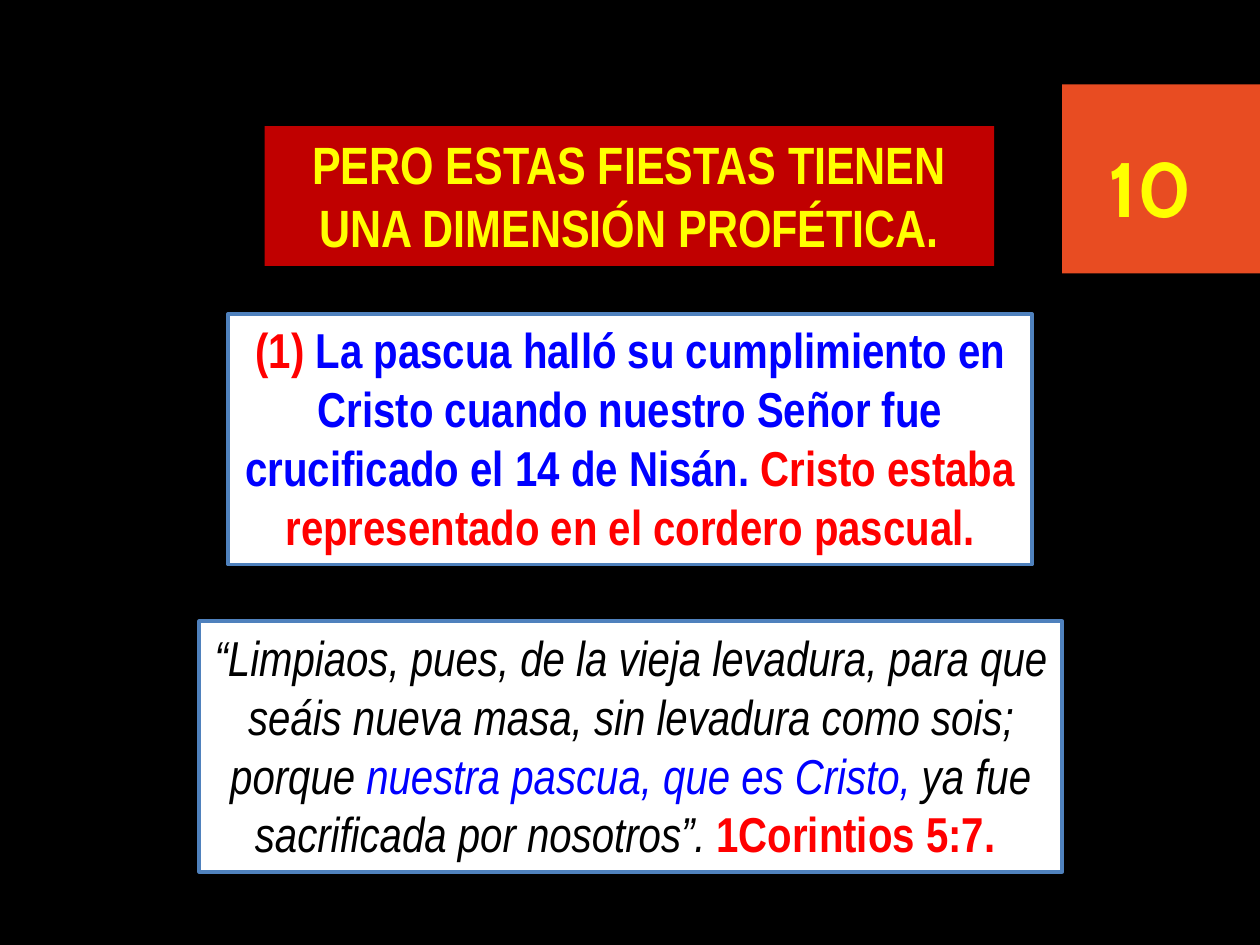
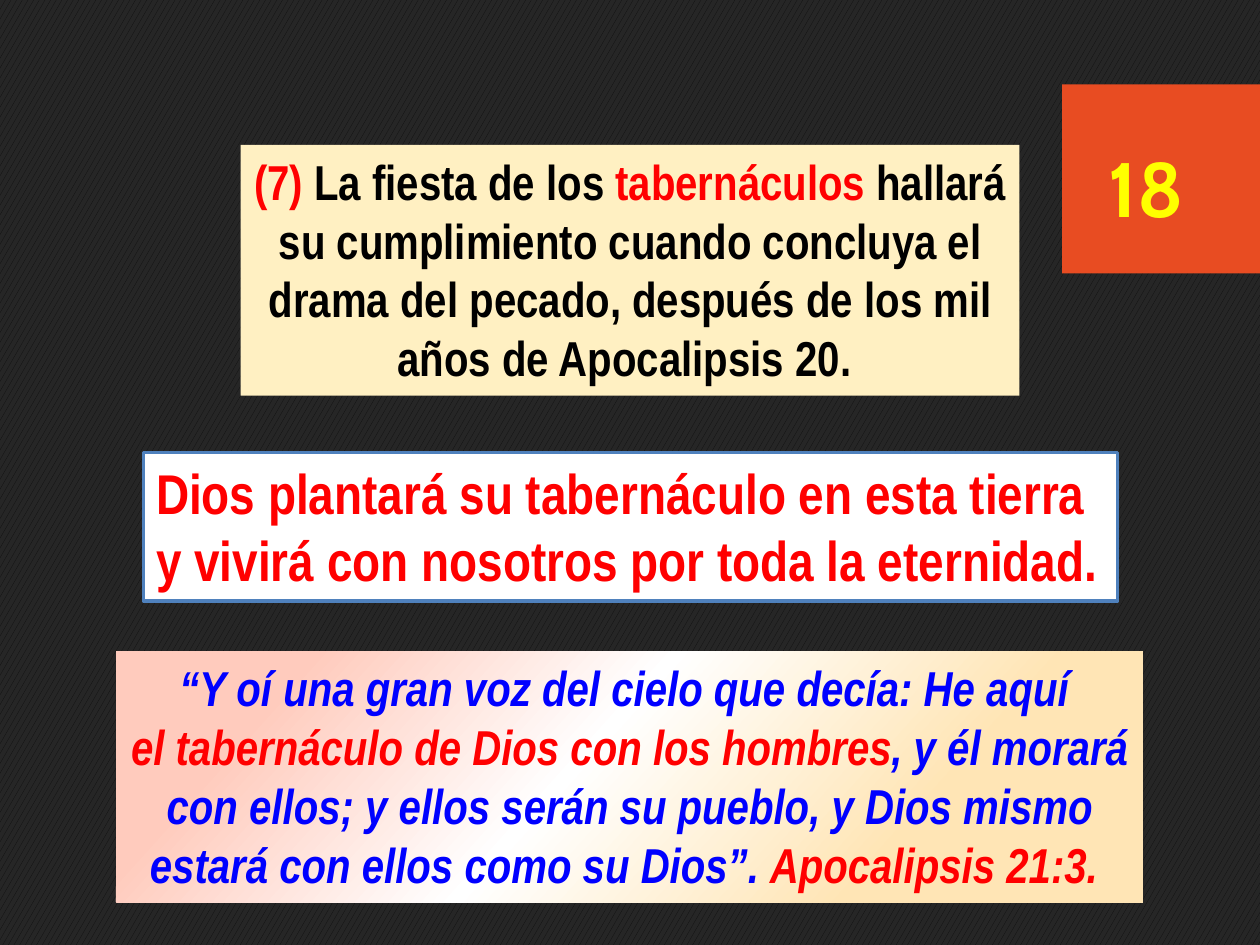
from copy import deepcopy

from pptx import Presentation
from pptx.dml.color import RGBColor
from pptx.enum.dml import MSO_PATTERN
from pptx.enum.shapes import MSO_SHAPE
from pptx.enum.text import MSO_ANCHOR, MSO_AUTO_SIZE, PP_ALIGN
from pptx.util import Inches, Pt

# Shared look
TEXT_FONT = "Arial Narrow"
NUMBER_FONT = "Cabin"
BLACK, WHITE, RED, BLUE, YELLOW = "000000", "FFFFFF", "FF0000", "0000FF", "FFFF00"
ORANGE, DARK_RED, CREAM, BORDER = "E84C22", "C00000", "FFF0C2", "4F81BD"
TITLE_ONLY_LAYOUT = 5


def rgb(value):
    return RGBColor.from_string(value)


def place(shape, left, top, width, height):
    shape.left, shape.top = Inches(left), Inches(top)
    shape.width, shape.height = Inches(width), Inches(height)


def fill_solid(fill, color):
    fill.solid()
    fill.fore_color.rgb = rgb(color)


def fill_gradient(shape, stops, clockwise_angle):
    """Fill with (position, color) stops; the default gradient has two."""
    shape.fill.gradient()
    shape.fill.gradient_angle = 360 - clockwise_angle
    stop_list = shape._element.spPr.find(".//{*}gsLst")
    for _ in range(len(stops) - len(stop_list)):
        stop_list.append(deepcopy(stop_list[-1]))
    for stop, (position, color) in zip(shape.fill.gradient_stops, stops):
        stop.position = position
        stop.color.rgb = rgb(color)


def add_rectangle(slide, left, top, width, height, color, border=None):
    shape = slide.shapes.add_shape(MSO_SHAPE.RECTANGLE, Inches(left), Inches(top),
                                   Inches(width), Inches(height))
    shape.shadow.inherit = False
    fill_solid(shape.fill, color)
    if border:
        shape.line.color.rgb = rgb(border)
        shape.line.width = Pt(2)
    else:
        shape.line.fill.background()
    return shape


def write(shape, paragraphs, size=28, bold=True, italic=False, align=PP_ALIGN.CENTER):
    """Write paragraphs, each a list of (text, color) runs."""
    frame = shape.text_frame
    frame.word_wrap = True
    frame.auto_size = MSO_AUTO_SIZE.SHAPE_TO_FIT_TEXT
    frame.vertical_anchor = MSO_ANCHOR.TOP
    for index, runs in enumerate(paragraphs):
        paragraph = frame.add_paragraph() if index else frame.paragraphs[0]
        paragraph.alignment = align
        font = paragraph.font
        font.name, font.size, font.bold, font.italic = TEXT_FONT, Pt(size), bold, italic
        for text, color in runs:
            run = paragraph.add_run()
            run.text = text
            run.font.color.rgb = rgb(color)


def add_title(slide, position, color, runs, size):
    title = slide.shapes.title
    place(title, *position)
    fill_solid(title.fill, color)
    write(title, [runs], size)


def add_number(slide, number):
    """Orange tab at the right edge with the slide's number."""
    add_rectangle(slide, 8.43, 0.67, 1.57, 1.5, ORANGE)
    box = slide.shapes.add_textbox(Inches(8.58), Inches(0.89), Inches(1.27), Inches(1.19))
    frame = box.text_frame
    frame.word_wrap = True
    frame.vertical_anchor = MSO_ANCHOR.MIDDLE
    frame.margin_left = Inches(0.22)
    paragraph = frame.paragraphs[0]
    paragraph.text = number
    font = paragraph.font
    font.name, font.size, font.bold = NUMBER_FONT, Pt(44), True
    font.color.rgb = rgb(YELLOW)


def add_slide(presentation, number):
    slide = presentation.slides.add_slide(presentation.slide_layouts[TITLE_ONLY_LAYOUT])
    add_number(slide, number)
    return slide


def build_passover(presentation):
    slide = add_slide(presentation, "10")
    fill_solid(slide.background.fill, BLACK)
    add_title(slide, (2.1, 1, 5.79, 1.11), DARK_RED,
              [("PERO ESTAS FIESTAS TIENEN UNA DIMENSIÓN PROFÉTICA.", YELLOW)], 30)

    fulfilment = add_rectangle(slide, 1.81, 2.49, 6.38, 1.99, WHITE, BORDER)
    write(fulfilment, [[
        ("(1) ", RED),
        ("La pascua halló su cumplimiento en Cristo cuando nuestro Señor fue "
         "crucificado el 14 de Nisán. ", BLUE),
        ("Cristo estaba representado en el cordero pascual.", RED)]])

    verse = add_rectangle(slide, 1.58, 4.93, 6.85, 1.99, WHITE, BORDER)
    write(verse, [[
        ("“Limpiaos, pues, de la vieja levadura, para que seáis nueva masa, "
         "sin levadura como sois; porque ", BLACK),
        ("nuestra pascua, que es Cristo, ", BLUE),
        ("ya fue sacrificada por nosotros”. ", BLACK),
        ("1Corintios 5:7. ", RED)]], bold=False, italic=True)
    reference = verse.text_frame.paragraphs[0].runs[-1].font
    reference.bold, reference.italic = True, False


def build_tabernacles(presentation):
    slide = add_slide(presentation, "18")
    background = slide.background.fill
    background.patterned()
    background.pattern = MSO_PATTERN.LARGE_CONFETTI
    background.fore_color.rgb = rgb("0D0D0D")
    background.back_color.rgb = rgb("262626")
    add_title(slide, (1.91, 1.15, 6.18, 1.99), CREAM, [
        ("(7) ", RED),
        ("La fiesta de los ", BLACK),
        ("tabernáculos", RED),
        (" hallará su cumplimiento cuando concluya el drama del pecado, "
         "después de los mil años de Apocalipsis 20. ", BLACK)], 28)

    promise = add_rectangle(slide, 1.14, 3.59, 7.73, 1.18, WHITE, BORDER)
    write(promise, [[("Dios plantará su tabernáculo en esta tierra y vivirá con "
                      "nosotros por toda la eternidad.", RED)]],
          size=32, align=PP_ALIGN.LEFT)

    verse = add_rectangle(slide, 0.92, 5.17, 8.15, 1.99, WHITE)
    fill_gradient(verse, [(0.16, "FFCBBD"), (0.45, WHITE), (0.76, "FFE5B5")], 42)
    write(verse, [
        [("“Y oí una gran voz del cielo que decía: He aquí ", BLUE)],
        [("el tabernáculo de Dios con los hombres", RED),
         (", y él morará con ellos; y ellos serán su pueblo, y Dios mismo "
          "estará con ellos como su Dios”. ", BLUE),
         ("Apocalipsis 21:3. ", RED)]], italic=True)


def main():
    presentation = Presentation()
    presentation.slide_width, presentation.slide_height = Inches(10), Inches(7.5)
    build_passover(presentation)
    build_tabernacles(presentation)
    presentation.save("out.pptx")


if __name__ == "__main__":
    main()
